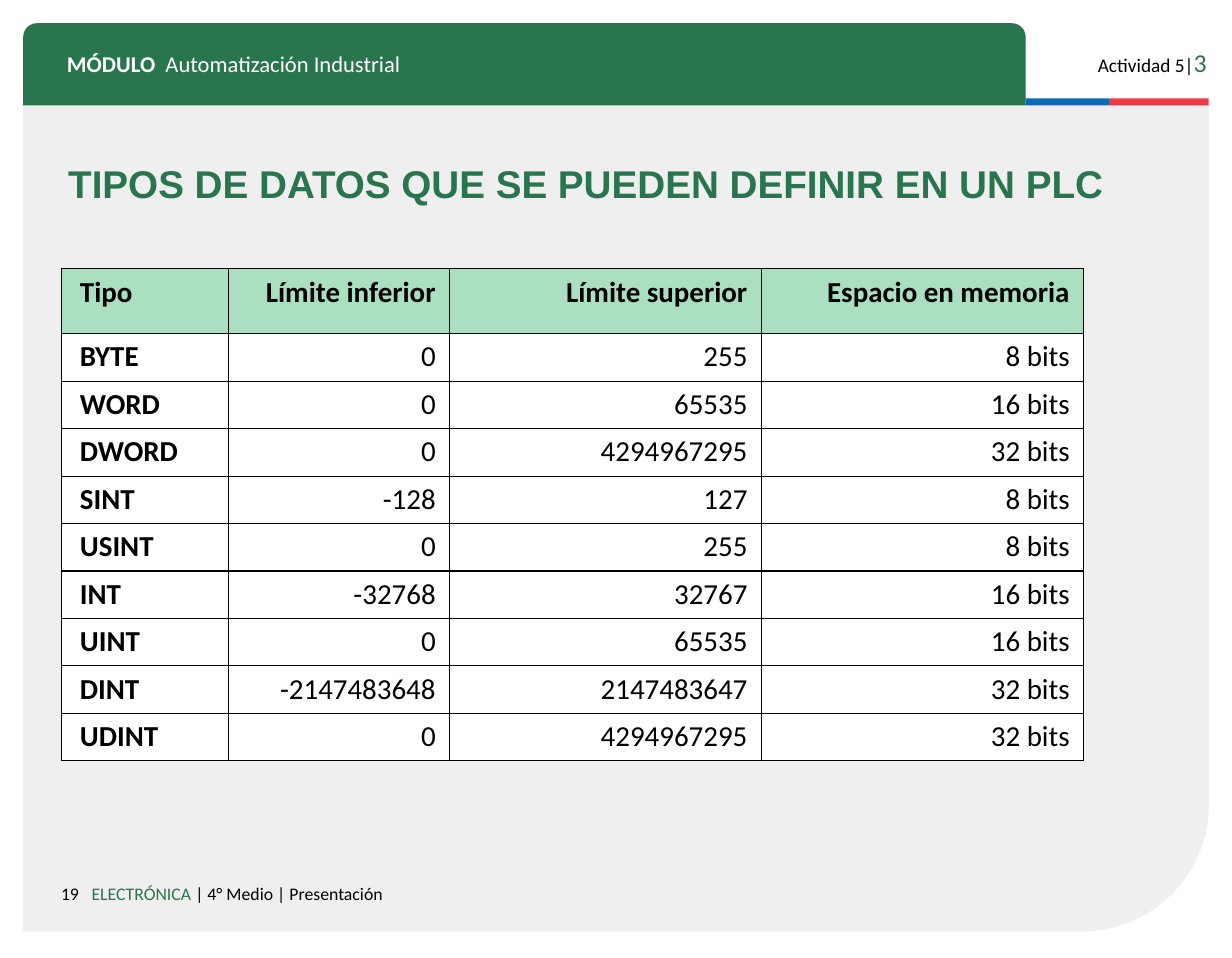
from dataclasses import dataclass

from lxml.etree import SubElement
from pptx import Presentation
from pptx.dml.color import RGBColor
from pptx.enum.shapes import MSO_SHAPE
from pptx.enum.text import PP_ALIGN
from pptx.oxml import parse_xml
from pptx.oxml.ns import nsdecls, qn
from pptx.util import Inches, Pt


@dataclass(frozen=True)
class Theme:
    green: str = "29754D"
    mint: str = "AAE0C1"
    panel: str = "EFEFEF"
    blue: str = "0F69B4"
    red: str = "EB3C46"
    white: str = "FFFFFF"
    black: str = "000000"
    body_font: str = "Calibri"
    title_font: str = "Arial"
    footer_size: int = 11
    activity_size: int = 12
    module_size: int = 14
    number_size: int = 16
    table_size: int = 18
    title_size: int = 24


theme = Theme()


def add_run(paragraph, text, size, color, bold=False, font=theme.body_font):
    run = paragraph.add_run()
    run.text = text
    run.font.name = font
    run.font.size = Pt(size)
    run.font.bold = bold
    run.font.color.rgb = RGBColor.from_string(color)


def add_text_line(left, top, width, height, inset_left=0.1, inset_y=0.1, align=PP_ALIGN.LEFT):
    """Add a wrapping text box and return its first paragraph."""
    frame = slide.shapes.add_textbox(Inches(left), Inches(top), Inches(width), Inches(height)).text_frame
    frame.word_wrap = True
    frame.margin_left, frame.margin_right = Inches(inset_left), Inches(0.1)
    frame.margin_top = frame.margin_bottom = Inches(inset_y)
    frame.paragraphs[0].alignment = align
    return frame.paragraphs[0]


prs = Presentation()
prs.slide_width, prs.slide_height = Inches(10.63), Inches(8.27)
slide = prs.slides.add_slide(prs.slide_layouts[6])

# Background panel, flag stripes and header band
for preset, left, top, width, height, color, adjustments, turned in [
    (MSO_SHAPE.ROUND_1_RECTANGLE, 0.2, 0.9, 10.23, 7.14, theme.panel, [0.153], True),
    (MSO_SHAPE.RECTANGLE, 8.85, 0.85, 0.72, 0.06, theme.blue, [], False),
    (MSO_SHAPE.RECTANGLE, 9.57, 0.85, 0.86, 0.06, theme.red, [], False),
    (MSO_SHAPE.ROUND_2_SAME_RECTANGLE, 0.2, 0.2, 8.65, 0.71, theme.green, [0.167, 0], False),
]:
    block = slide.shapes.add_shape(preset, Inches(left), Inches(top), Inches(width), Inches(height))
    block.shadow.inherit = False
    block.fill.solid()
    block.fill.fore_color.rgb = RGBColor.from_string(color)
    block.line.fill.background()
    for index, value in enumerate(adjustments):
        block.adjustments[index] = value
    if turned:  # puts the rounded corner at the bottom right
        block.rotation = 180
        block.element.spPr.xfrm.set("flipH", "1")

# Footer
page = add_text_line(0.2, 7.53, 0.58, 0.29, align=PP_ALIGN.RIGHT)
add_run(page, "19", theme.footer_size, theme.black)
footer = add_text_line(0.41, 7.53, 7.42, 0.38, inset_left=0.38)
add_run(footer, "ELECTRÓNICA ", theme.footer_size, theme.green)
add_run(footer, "| 4° Medio | Presentación", theme.footer_size, theme.black)

# Header
module = add_text_line(0.48, 0.38, 8.14, 0.35)
module.line_spacing = 0.8
tab_stops = SubElement(module._p.get_or_add_pPr(), qn("a:tabLst"))
SubElement(tab_stops, qn("a:tab"), pos=str(Inches(0.85)), algn="l")
add_run(module, "MÓDULO", theme.module_size, theme.white, bold=True)
add_run(module, "\tAutomatización Industrial", theme.module_size, theme.white)
activity = add_text_line(9.23, 0.3, 1.28, 0.38, align=PP_ALIGN.RIGHT)
add_run(activity, "Actividad 5|", theme.activity_size, theme.black)
add_run(activity, "3", theme.number_size, theme.green)

title = add_text_line(0.49, 1.33, 9.88, 0.5, inset_y=0.05)
add_run(title, "TIPOS DE DATOS QUE SE PUEDEN DEFINIR EN UN PLC",
        theme.title_size, theme.green, bold=True, font=theme.title_font)

# Data types
data_types = [
    ("Tipo", "Límite inferior", "Límite superior", "Espacio en memoria"),
    ("BYTE", "0", "255", "8 bits"),
    ("WORD", "0", "65535", "16 bits"),
    ("DWORD", "0", "4294967295", "32 bits"),
    ("SINT", "-128", "127", "8 bits"),
    ("USINT", "0", "255", "8 bits"),
    ("INT", "-32768", "32767", "16 bits"),
    ("UINT", "0", "65535", "16 bits"),
    ("DINT", "-2147483648", "2147483647", "32 bits"),
    ("UDINT", "0", "4294967295", "32 bits"),
]
column_widths = [1.44, 1.91, 2.69, 2.78]
header_height, row_height = 0.56, 0.41
table = slide.shapes.add_table(
    len(data_types), len(column_widths), Inches(0.53), Inches(2.32), Inches(sum(column_widths)),
    Inches(header_height + row_height * (len(data_types) - 1)),
).table
for column, width in zip(table.columns, column_widths):
    column.width = Inches(width)

for row_index, values in enumerate(data_types):
    is_header = row_index == 0
    table.rows[row_index].height = Inches(header_height if is_header else row_height)
    for column_index, value in enumerate(values):
        is_type = column_index == 0
        cell = table.cell(row_index, column_index)
        cell.margin_left = Inches(0.16 if is_type else 0.08)
        cell.margin_right = Inches(0.01 if is_type else 0.12)
        cell.margin_top = cell.margin_bottom = Inches(0.05)
        for side in ("lnL", "lnR", "lnT", "lnB"):
            cell._tc.get_or_add_tcPr().append(parse_xml(
                f'<a:{side} {nsdecls("a")} w="{Pt(0.75)}"><a:solidFill>'
                f'<a:srgbClr val="{theme.black}"/></a:solidFill></a:{side}>'))
        cell.fill.solid()
        cell.fill.fore_color.rgb = RGBColor.from_string(theme.mint if is_header else theme.white)
        entry = cell.text_frame.paragraphs[0]
        entry.alignment = PP_ALIGN.LEFT if is_type else PP_ALIGN.RIGHT
        add_run(entry, value, theme.table_size, theme.black, bold=is_header or is_type)

prs.save("out.pptx")
